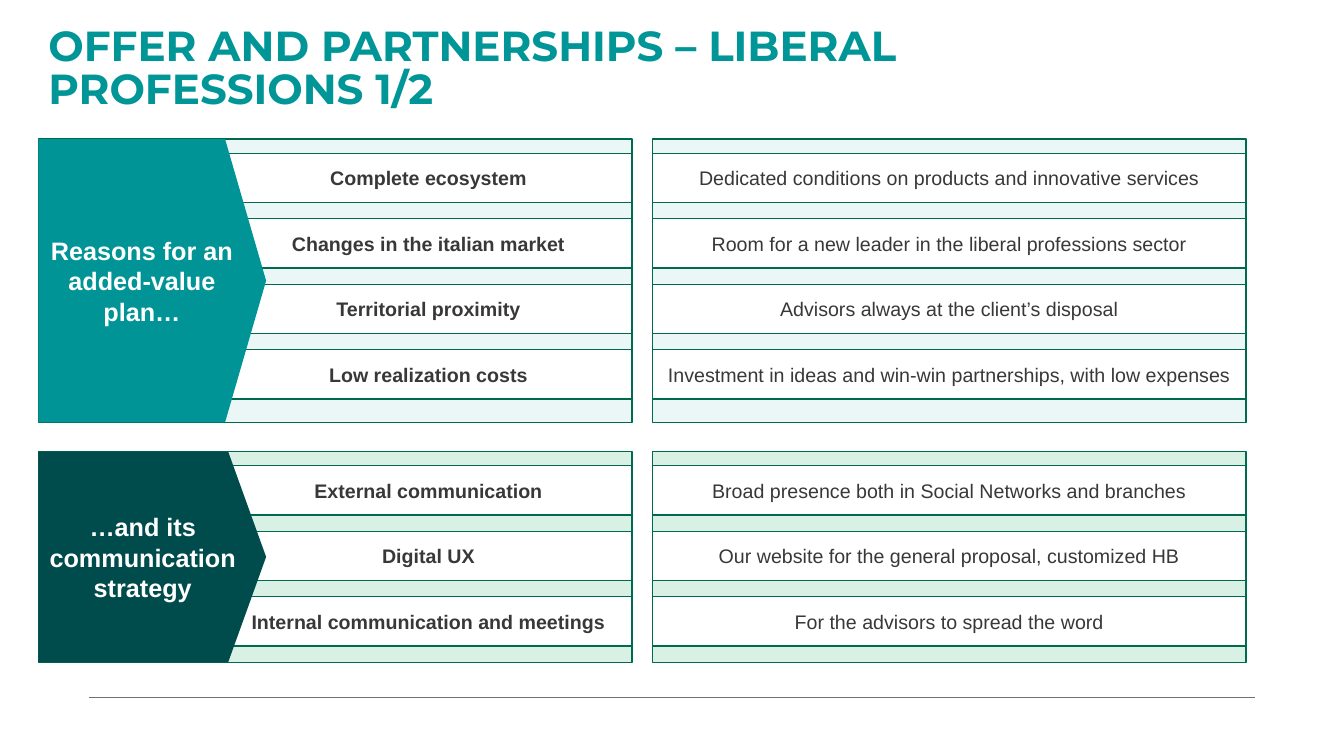
from dataclasses import dataclass

import pptx
import pptx.dml.color
import pptx.enum.shapes
import pptx.enum.text
import pptx.oxml.ns
import pptx.util
from lxml import etree

Inches = pptx.util.Inches
Pt = pptx.util.Pt
SHAPE = pptx.enum.shapes.MSO_SHAPE
ALIGN = pptx.enum.text.PP_ALIGN
MIDDLE = pptx.enum.text.MSO_ANCHOR.MIDDLE

LEFT, RIGHT, PANEL_W = 0.38, 6.47, 5.89
LABEL_LEFT, LABEL_W = 2.23, 4.04
ARROW_W, ARROW_ADJ = 2.26, 0.18
ROW_OFFSET, ROW_PITCH, ROW_H = 0.14, 0.65, 0.49
BORDER, WHITE, DARK = "006A4E", "FFFFFF", "38383A"

TITLE = {"name": "Montserrat", "size": Pt(30), "bold": True}
HEADING = {"name": "Arial", "size": Pt(18), "bold": True}
LABEL = {"name": "Arial", "size": Pt(14), "bold": True}
DETAIL = {"name": "Arial", "size": Pt(14), "bold": False}


@dataclass
class Section:
    heading: str
    top: float
    height: float
    panel_color: str
    arrow_color: str
    rows: list[tuple[str, str]]


SECTIONS = [
    Section("Reasons for an added-value plan…", 1.38, 2.81, "EBF7F7", "009496", [
        ("Complete ecosystem", "Dedicated conditions on products and innovative services"),
        ("Changes in the italian market", "Room for a new leader in the liberal professions sector"),
        ("Territorial proximity", "Advisors always at the client’s disposal"),
        ("Low realization costs", "Investment in ideas and win-win partnerships, with low expenses"),
    ]),
    Section("…and its communication strategy", 4.48, 2.09, "D8F1E4", "004B4C", [
        ("External communication", "Broad presence both in Social Networks and branches"),
        ("Digital UX", "Our website for the general proposal, customized HB"),
        ("Internal communication and meetings", "For the advisors to spread the word"),
    ]),
]


def rgb(color: str) -> pptx.dml.color.RGBColor:
    return pptx.dml.color.RGBColor.from_string(color)


def write(sp, text: str, fmt: dict, color: str, align) -> None:
    tf = sp.text_frame
    tf.word_wrap = True
    tf.vertical_anchor = MIDDLE
    p = tf.paragraphs[0]
    p.alignment = align
    r = p.add_run()
    r.text = text
    for key, value in fmt.items():
        setattr(r.font, key, value)
    r.font.color.rgb = rgb(color)


def add_box(s, kind, left: float, top: float, width: float, height: float,
            fill: str, border: str | None = None):
    sp = s.shapes.add_shape(kind, Inches(left), Inches(top), Inches(width), Inches(height))
    sp.shadow.inherit = False
    sp.fill.solid()
    sp.fill.fore_color.rgb = rgb(fill)
    if border:
        sp.line.color.rgb = rgb(border)
        sp.line.width = Pt(1)
    else:
        sp.line.fill.background()
    return sp


def add_panel(s, section: Section, left: float) -> None:
    add_box(s, SHAPE.RECTANGLE, left, section.top, PANEL_W, section.height,
            section.panel_color, BORDER)


def add_rows(s, section: Section, texts: list[str], left: float, width: float, fmt: dict) -> None:
    for i, text in enumerate(texts):
        top = section.top + ROW_OFFSET + i * ROW_PITCH
        sp = add_box(s, SHAPE.RECTANGLE, left, top, width, ROW_H, WHITE, BORDER)
        write(sp, text, fmt, DARK, ALIGN.CENTER)


def add_section(s, section: Section) -> None:
    labels, details = zip(*section.rows)
    add_panel(s, section, LEFT)
    add_rows(s, section, labels, LABEL_LEFT, LABEL_W, LABEL)
    arrow = add_box(s, SHAPE.PENTAGON, LEFT, section.top, ARROW_W, section.height,
                    section.arrow_color)
    arrow.adjustments[0] = ARROW_ADJ
    write(arrow, section.heading, HEADING, WHITE, ALIGN.CENTER)
    add_panel(s, section, RIGHT)
    add_rows(s, section, details, RIGHT, PANEL_W, DETAIL)


def add_title(s, text: str) -> None:
    sp = s.shapes.title
    box = {"left": 0.38, "top": 0.21, "width": 11.81, "height": 0.98}
    for key, value in box.items():
        setattr(sp, key, Inches(value))
    write(sp, text, TITLE, "009597", ALIGN.LEFT)
    sp.text_frame.auto_size = pptx.enum.text.MSO_AUTO_SIZE.NONE
    sp.text_frame.paragraphs[0].line_spacing = 0.85


def add_footer_line(s) -> None:
    line = s.shapes.add_connector(pptx.enum.shapes.MSO_CONNECTOR.STRAIGHT,
                                  Inches(0.88), Inches(6.92), Inches(12.45), Inches(6.92))
    line.line.color.rgb = rgb("707173")
    line.line.width = Pt(0.5)
    etree.SubElement(line._element.spPr, pptx.oxml.ns.qn("a:effectLst"))


def main() -> None:
    prs = pptx.Presentation()
    prs.slide_width, prs.slide_height = Inches(13.33), Inches(7.5)
    s = prs.slides.add_slide(prs.slide_layouts[5])
    add_title(s, "OFFER AND PARTNERSHIPS – LIBERAL PROFESSIONS 1/2")
    add_footer_line(s)
    for section in SECTIONS:
        add_section(s, section)
    prs.save("out.pptx")


if __name__ == "__main__":
    main()
